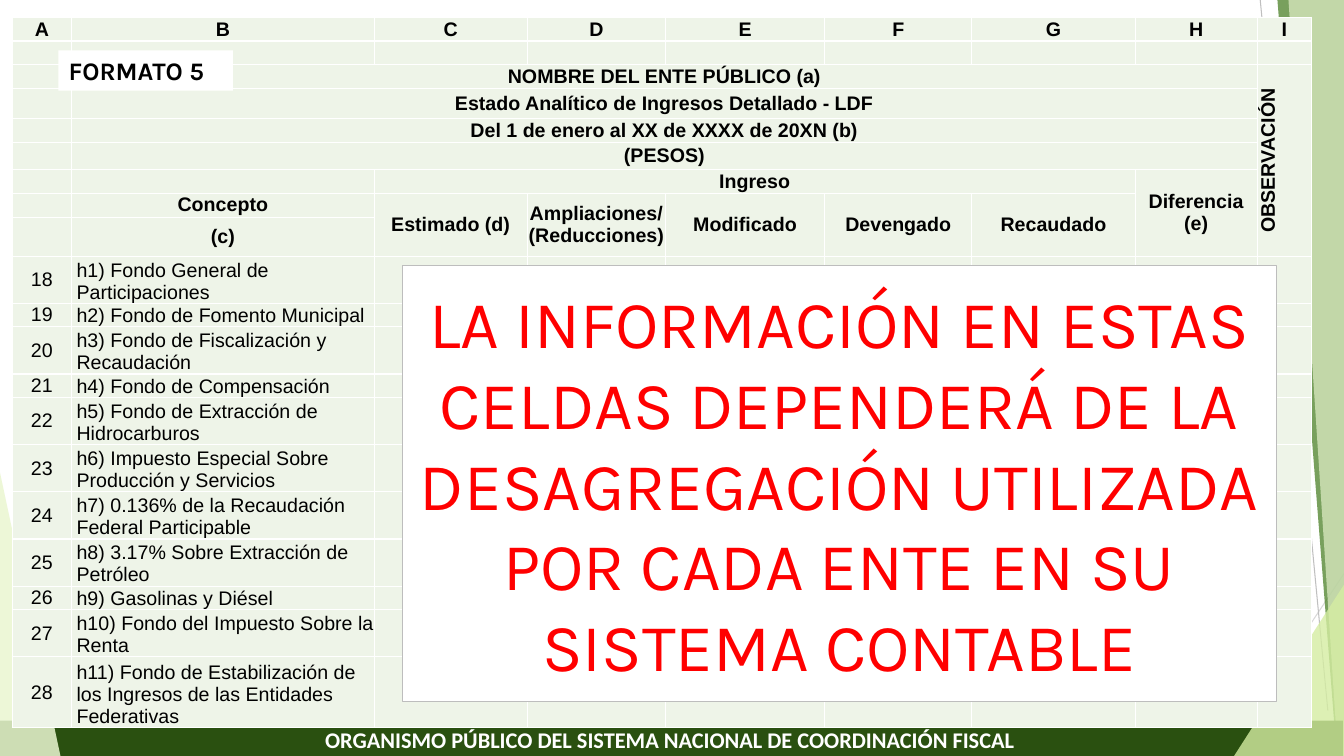
from dataclasses import dataclass
from itertools import product

from lxml import etree
from pptx import Presentation, util as u
from pptx.dml.color import RGBColor
from pptx.enum import shapes, text
from pptx.oxml import ns

COLORS = {
    "white": "FFFFFF", "black": "000000", "red": "FF0000", "cell": "EEF4E8",
    "bar": "2A5010", "forest": "3F7819", "pale": "EAF6D1", "lime": "D5EDA2",
    "gray": "BDBDBD", "ray_low": "D9D9D9", "ray_high": "BFBFBF",
}
WIDTH, HEIGHT = u.Inches(13.33), u.Inches(7.5)
CENTER, LEFT = text.PP_ALIGN.CENTER, text.PP_ALIGN.LEFT
MIDDLE, BOTTOM = text.MSO_ANCHOR.MIDDLE, text.MSO_ANCHOR.BOTTOM


@dataclass
class Ray:
    start: tuple[float, float]
    end: tuple[float, float]
    color: str


@dataclass
class Facet:
    points: list[tuple[float, float]]
    color: str
    alpha: int


@dataclass
class Style:
    size: int
    font: str
    color: str
    bold: bool = False
    align: text.PP_ALIGN = CENTER


@dataclass
class Heading:
    row: int
    col: int
    label: str
    rows: int = 1
    cols: int = 1
    vertical: bool = False


@dataclass
class Concept:
    label: str
    lines: int = 2


RAYS = [
    Ray((91, 100), (100, 75.87), "ray_low"),
    Ray((93.77, 0), (98.8, 94), "ray_high"),
]
BACK_FACETS = [
    Facet([(95.05, 0), (99.47, 100), (100, 100), (100, 0)], "forest", 70),
    Facet([(95.87, 0), (99.55, 100), (100, 100), (100, 0)], "pale", 65),
]
FRONT_FACETS = [
    Facet([(0, 62.5), (4.5, 100), (0, 100)], "pale", 85),
    Facet([(91.82, 100), (100, 77.33), (100, 100)], "lime", 80),
]
COLUMN_SHARES = [4.43, 22.51, 11.4, 10.28, 11.85, 10.95, 12.15, 9.08, 4.05]
HEADER_SHARES = [3.17, 3.13, 3.17, 3.97, 3.13, 3.57, 3.17, 3.17, 5.16]
LINE_SHARE = 3.12
FIRST_NUMBER = 18
HEADINGS = [Heading(0, col, letter) for col, letter in enumerate("ABCDEFGHI")] + [
    Heading(2, 1, "NOMBRE DEL ENTE PÚBLICO (a)", cols=7),
    Heading(2, 8, "OBSERVACIÓN", rows=7, vertical=True),
    Heading(3, 1, "Estado Analítico de Ingresos Detallado - LDF", cols=7),
    Heading(4, 1, "Del 1 de enero al XX de XXXX de 20XN (b)", cols=7),
    Heading(5, 1, "(PESOS)", cols=7),
    Heading(6, 2, "Ingreso", cols=5),
    Heading(6, 7, "Diferencia (e)", rows=3),
    Heading(7, 1, "Concepto"),
    Heading(8, 1, "(c)"),
] + [Heading(7, col, label, rows=2) for col, label in enumerate(
    ["Estimado (d)", "Ampliaciones/ (Reducciones)", "Modificado", "Devengado", "Recaudado"], 2)]
CONCEPTS = [
    Concept("Fondo General de Participaciones"),
    Concept("Fondo de Fomento Municipal", 1),
    Concept("Fondo de Fiscalización y Recaudación"),
    Concept("Fondo de Compensación", 1),
    Concept("Fondo de Extracción de Hidrocarburos"),
    Concept("Impuesto Especial Sobre Producción y Servicios"),
    Concept("0.136% de la Recaudación Federal Participable"),
    Concept("3.17% Sobre Extracción de Petróleo"),
    Concept("Gasolinas y Diésel", 1),
    Concept("Fondo del Impuesto Sobre la Renta"),
    Concept("Fondo de Estabilización de los Ingresos de las Entidades Federativas", 3),
]
HEAD_STYLE = Style(14, "Arial", "black", bold=True)
NUMBER_STYLE = Style(14, "Arial", "black")
CONCEPT_STYLE = Style(14, "Arial", "black", align=LEFT)


def rgb(name: str) -> RGBColor:
    return RGBColor.from_string(COLORS[name])


def across(share: float) -> int:
    return round(WIDTH * share / 100)


def down(share: float) -> int:
    return round(HEIGHT * share / 100)


def place(sp, left: float, top: float, width: float, height: float) -> None:
    sp.left, sp.top = across(left), down(top)
    sp.width, sp.height = across(width), down(height)


def write(tf, label: str, style: Style) -> None:
    p = tf.paragraphs[0]
    p.alignment = style.align
    p.font.size, p.font.name, p.font.bold = u.Pt(style.size), style.font, style.bold
    p.font.color.rgb = rgb(style.color)
    if label:
        p.add_run().text = label


def draw_ray(s, ray: Ray) -> None:
    (x1, y1), (x2, y2) = ray.start, ray.end
    line = s.shapes.add_connector(
        shapes.MSO_CONNECTOR.STRAIGHT, across(x1), down(y1), across(x2), down(y2))
    line.line.color.rgb = rgb(ray.color)
    line.line.width = u.Pt(0.75)
    etree.SubElement(line._element.spPr, ns.qn("a:effectLst"))


def draw_facet(s, facet: Facet) -> None:
    points = [(across(x), down(y)) for x, y in facet.points]
    builder = s.shapes.build_freeform(*points[0])
    builder.add_line_segments(points[1:], close=True)
    sp = builder.convert_to_shape()
    sp.shadow.inherit = False
    sp.line.fill.background()
    sp.fill.solid()
    sp.fill.fore_color.rgb = rgb(facet.color)
    color = sp._element.spPr.find(".//" + ns.qn("a:srgbClr"))
    etree.SubElement(color, ns.qn("a:alpha"), val=str(facet.alpha * 1000))


def draw_panel(s, box: tuple[float, float, float, float], fill: str, label: str,
               style: Style, outline: str = "") -> None:
    sp = s.shapes.add_shape(shapes.MSO_SHAPE.RECTANGLE, 0, 0, 0, 0)
    place(sp, *box)
    sp.shadow.inherit = False
    sp.fill.solid()
    sp.fill.fore_color.rgb = rgb(fill)
    if outline:
        sp.line.color.rgb = rgb(outline)
        sp.line.width = u.Pt(0.75)
    else:
        sp.line.fill.background()
    sp.text_frame.word_wrap = True
    write(sp.text_frame, label, style)


def format_cell(cell) -> None:
    cell.margin_left = cell.margin_right = cell.margin_top = cell.margin_bottom = 0
    tc_pr = cell._tc.get_or_add_tcPr()
    for side in ("lnL", "lnR", "lnT", "lnB"):
        border = etree.SubElement(tc_pr, ns.qn("a:" + side), w=str(u.Pt(1)))
        fill = etree.SubElement(border, ns.qn("a:solidFill"))
        etree.SubElement(fill, ns.qn("a:srgbClr"), val=COLORS["white"])
    cell.fill.solid()
    cell.fill.fore_color.rgb = rgb("cell")


def draw_table(s) -> None:
    heights = HEADER_SHARES + [LINE_SHARE * c.lines for c in CONCEPTS]
    frame = s.shapes.add_table(
        len(heights), len(COLUMN_SHARES), across(0.9), down(2.27),
        across(sum(COLUMN_SHARES)), down(sum(heights)))
    table = frame.table
    table.first_row = table.horz_banding = False
    for column, share in zip(table.columns, COLUMN_SHARES):
        column.width = across(share)
    for row, share in zip(table.rows, heights):
        row.height = down(share)

    labels = {(h.row, h.col): (h.label, HEAD_STYLE, MIDDLE if h.row else BOTTOM)
              for h in HEADINGS}
    for i, concept in enumerate(CONCEPTS):
        row = len(HEADER_SHARES) + i
        labels[row, 0] = str(FIRST_NUMBER + i), NUMBER_STYLE, MIDDLE
        labels[row, 1] = f"h{i + 1}) {concept.label}", CONCEPT_STYLE, BOTTOM
    for row, col in product(range(len(heights)), range(len(COLUMN_SHARES))):
        cell = table.cell(row, col)
        format_cell(cell)
        label, style, anchor = labels.get((row, col), ("", NUMBER_STYLE, MIDDLE))
        cell.vertical_anchor = anchor
        if style is CONCEPT_STYLE:
            cell.margin_left = across(0.37)
        write(cell.text_frame, label, style)
    for h in HEADINGS:
        cell = table.cell(h.row, h.col)
        if h.rows * h.cols > 1:
            cell.merge(table.cell(h.row + h.rows - 1, h.col + h.cols - 1))
        if h.vertical:
            cell._tc.get_or_add_tcPr().set("vert", "vert270")


def draw_title(s) -> None:
    sp = s.shapes.title
    place(sp, 4.35, 6.67, 12.98, 5.33)
    sp.fill.solid()
    sp.fill.fore_color.rgb = rgb("white")
    tf = sp.text_frame
    tf.auto_size = text.MSO_AUTO_SIZE.NONE
    tf.vertical_anchor = MIDDLE
    write(tf, "FORMATO 5", Style(18, "Karla", "black", bold=True, align=LEFT))
    s.shapes._spTree.append(sp._element)


def main() -> None:
    prs = Presentation()
    prs.slide_width, prs.slide_height = WIDTH, HEIGHT
    s = prs.slides.add_slide(prs.slide_layouts.get_by_name("Title Only"))
    for ray in RAYS:
        draw_ray(s, ray)
    for facet in BACK_FACETS:
        draw_facet(s, facet)
    draw_panel(s, (-0.23, 95.33, 100.15, 4.93), "bar",
               "ORGANISMO PÚBLICO DEL SISTEMA NACIONAL DE COORDINACIÓN FISCAL",
               Style(16, "Calibri", "white", bold=True))
    for facet in FRONT_FACETS:
        draw_facet(s, facet)
    draw_table(s)
    draw_panel(s, (29.93, 35.07, 65.04, 57.73), "white",
               "LA INFORMACIÓN EN ESTAS CELDAS DEPENDERÁ DE LA DESAGREGACIÓN "
               "UTILIZADA POR CADA ENTE EN SU SISTEMA CONTABLE",
               Style(48, "Karla", "red"), outline="gray")
    draw_title(s)
    prs.save("out.pptx")


if __name__ == "__main__":
    main()
